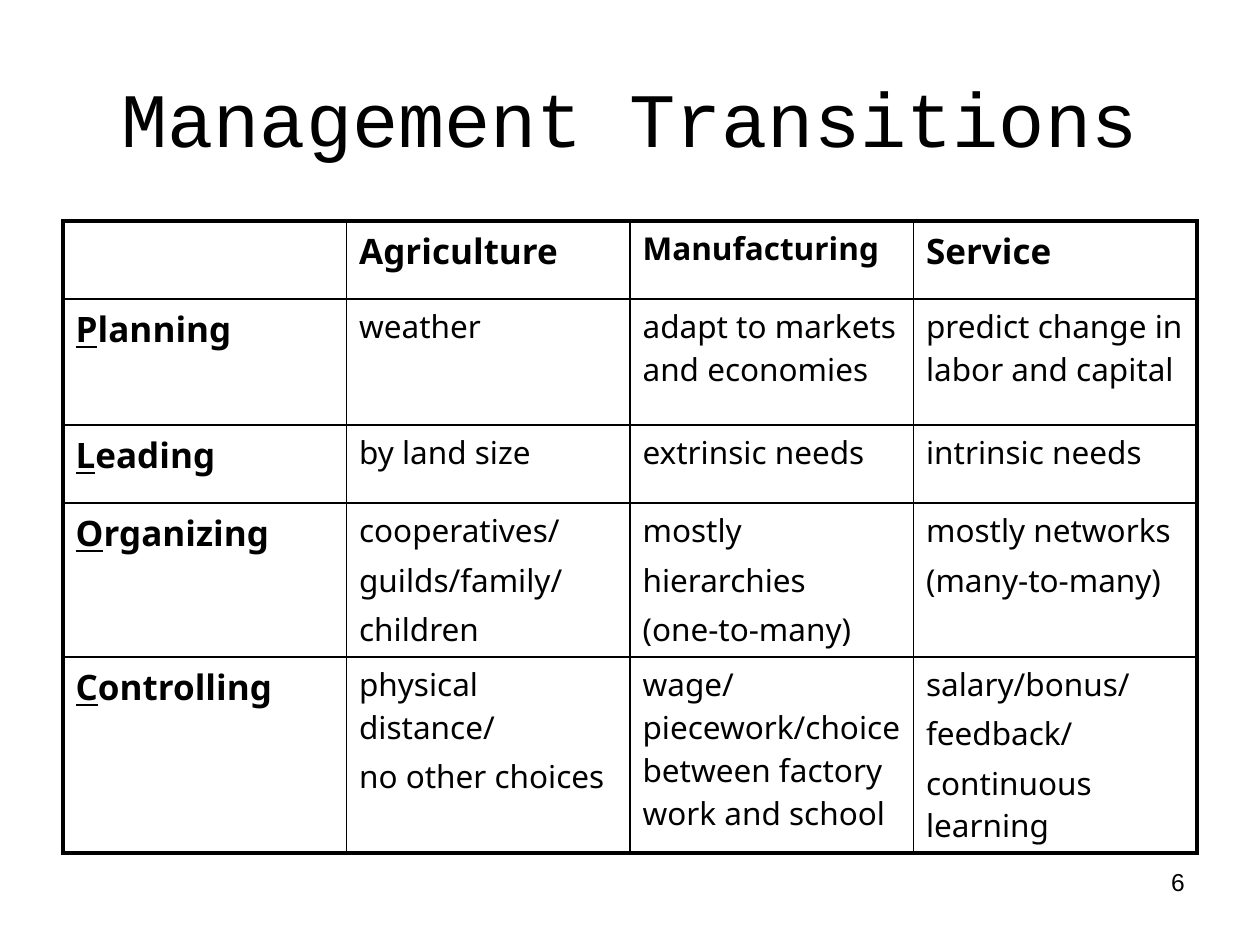
import pptx
import pptx.util
import pptx.dml.color
import pptx.enum.text
import pptx.oxml
import pptx.oxml.ns
from dataclasses import dataclass

ALIGN = pptx.enum.text.PP_ALIGN
ANCHOR = pptx.enum.text.MSO_ANCHOR


@dataclass(frozen=True)
class Theme:
    ink: str = "000000"
    paper: str = "FFFFFF"
    title_font: str = "Courier New"
    table_font: str = "Noto Sans"
    number_font: str = "Arial"
    title: int = 44
    head: int = 20
    body: int = 18
    number: int = 14
    frame: float = 2.25
    rule: float = 1


THEME = Theme()

HEADS = ["", "Agriculture", "Manufacturing", "Service"]
ROWS = [
    ["Planning", "weather", "adapt to markets and economies",
     "predict change in labor and capital"],
    ["Leading", "by land size", "extrinsic needs", "intrinsic needs"],
    ["Organizing", "cooperatives/\nguilds/family/\nchildren",
     "mostly\nhierarchies\n(one-to-many)", "mostly networks\n(many-to-many)"],
    ["Controlling", "physical distance/\nno other choices",
     "wage/piecework/choice between factory work and school",
     "salary/bonus/\nfeedback/\ncontinuous learning"],
]
ROW_HEIGHTS = [78, 126, 78, 154, 196]


def px(n):
    return round(n * 914400 / 126)


def write(tf, text, font, size, bold=False, align=ALIGN.LEFT, before=0,
          underline_first=False):
    tf.word_wrap = True
    for i, line in enumerate(text.split("\n")):
        p = tf.paragraphs[0] if i == 0 else tf.add_paragraph()
        p.alignment = align
        p.space_before = pptx.util.Pt(before)
        parts = [line[:1], line[1:]] if underline_first else [line]
        for j, part in enumerate(parts):
            r = p.add_run()
            r.text = part
            r.font.name = font
            r.font.size = pptx.util.Pt(size)
            r.font.bold = bold
            r.font.underline = underline_first and j == 0
            r.font.color.rgb = pptx.dml.color.RGBColor.from_string(THEME.ink)


def add_text(s, box, text, anchor=ANCHOR.TOP, **fmt):
    tf = s.shapes.add_textbox(*map(px, box)).text_frame
    tf.vertical_anchor = anchor
    write(tf, text, **fmt)


def set_borders(cell, widths):
    tcPr = cell._tc.get_or_add_tcPr()
    for side, width in widths.items():
        tcPr.append(pptx.oxml.parse_xml(
            f'<a:ln{side} {pptx.oxml.ns.nsdecls("a")} w="{pptx.util.Pt(width)}">'
            f'<a:solidFill><a:srgbClr val="{THEME.ink}"/></a:solidFill>'
            f'</a:ln{side}>'))


def add_title(s, box):
    add_text(s, box, "Management Transitions", anchor=ANCHOR.MIDDLE,
             font=THEME.title_font, size=THEME.title, align=ALIGN.CENTER)


def add_transitions_table(s, box):
    grid = [HEADS] + ROWS
    last_row, last_col = len(grid) - 1, len(HEADS) - 1
    table = s.shapes.add_table(len(grid), len(HEADS), *map(px, box)).table
    table.first_row = table.horz_banding = False
    for column in table.columns:
        column.width = px(box[2] / len(HEADS))
    for row, height in zip(table.rows, ROW_HEIGHTS):
        row.height = px(height)
    for i, texts in enumerate(grid):
        for j, text in enumerate(texts):
            cell = table.cell(i, j)
            edges = {"L": j == 0, "R": j == last_col,
                     "T": i == 0, "B": i == last_row}
            set_borders(cell, {side: THEME.frame if outer else THEME.rule
                               for side, outer in edges.items()})
            cell.fill.background()
            if not text:
                continue
            heading = i == 0 or j == 0
            large = heading and text != "Manufacturing"
            size = THEME.head if large else THEME.body
            write(cell.text_frame, text, font=THEME.table_font, size=size,
                  bold=heading, before=size / 5, underline_first=j == 0)


def add_page_number(s, box):
    add_text(s, box, "6", font=THEME.number_font, size=THEME.number,
             align=ALIGN.RIGHT)


def main():
    prs = pptx.Presentation()
    prs.slide_width, prs.slide_height = px(1260), px(945)
    s = prs.slides.add_slide(prs.slide_layouts[6])
    s.background.fill.solid()
    s.background.fill.fore_color.rgb = pptx.dml.color.RGBColor.from_string(THEME.paper)
    add_page_number(s, (903, 861, 294, 66))
    add_title(s, (63, 38, 1134, 158))
    add_transitions_table(s, (63, 221, 1134, sum(ROW_HEIGHTS)))
    prs.save("out.pptx")


if __name__ == "__main__":
    main()
